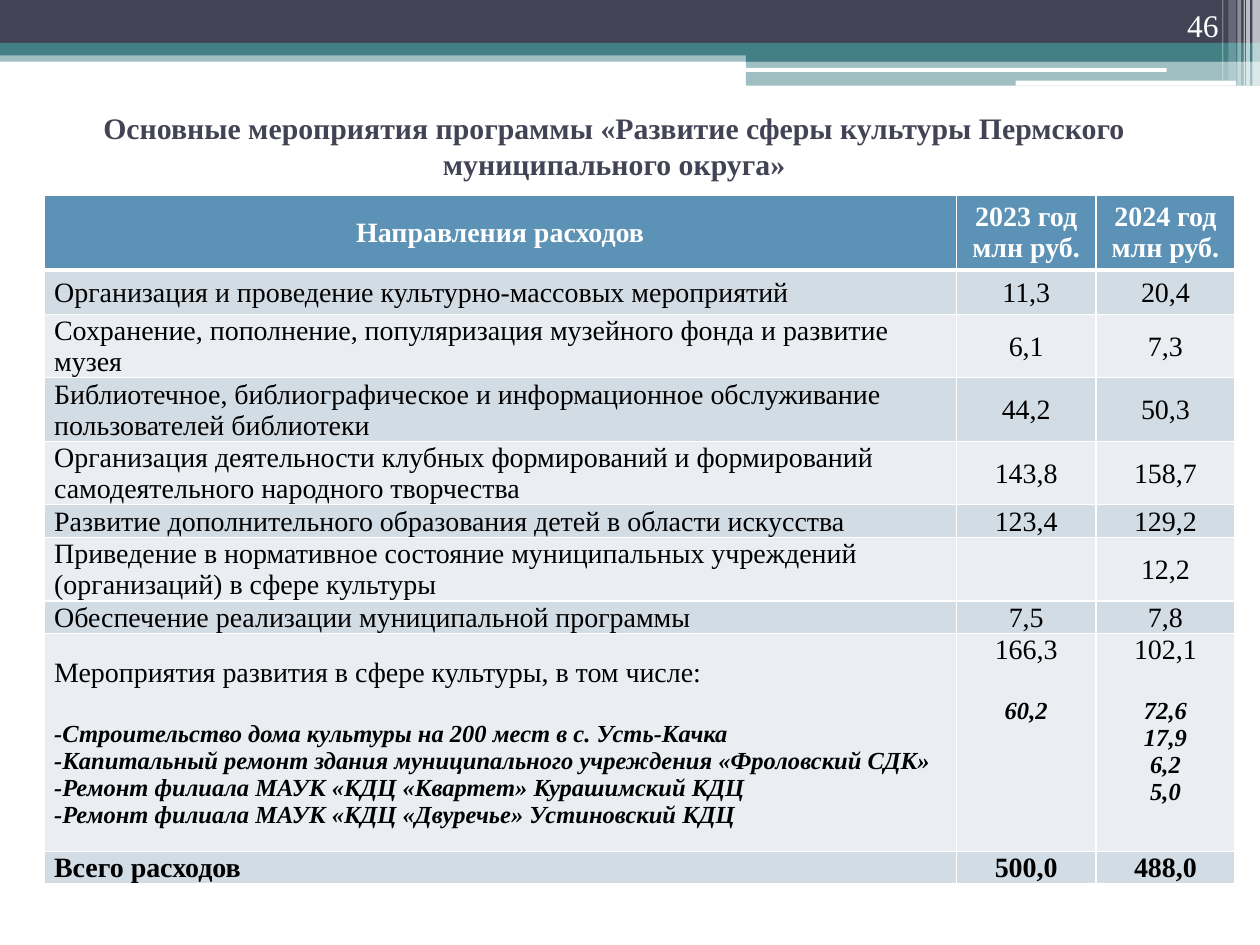
from lxml.etree import SubElement
from pptx import Presentation
from pptx.dml.color import RGBColor
from pptx.enum.shapes import MSO_SHAPE
from pptx.enum.text import MSO_ANCHOR, PP_ALIGN
from pptx.oxml.ns import qn
from pptx.util import Inches, Pt

COLORS = {
    "white": "FFFFFF", "black": "000000", "navy": "424456", "teal": "438086",
    "header": "5C92B5", "odd": "D2DCE5", "even": "EAEEF3",
}
COLS, ROWS = 100, 75  # grid cells across and down the slide

# left, top, width, height in grid cells, colour, opacity in percent
BANDS = [
    (0, 4, 100, 0.9, "teal", 50),
    (0, 0, 100, 3.4, "navy", 100),
    (0, 3.4, 100, 1, "teal", 100),
    (59.2, 3.9, 40.8, 1, "teal", 100),
    (59.2, 4.8, 40.8, 2, "teal", 50),
]
PILLS = [(59.1, 5.4, 33.5, 0.3), (80.6, 6.4, 17.5, 0.4)]
# left, width, height in grid cells, opacity in percent
STRIPES = [
    (99.4, 0.6, 6.8, 65), (98.9, 0.3, 6.8, 65), (98.7, 0.1, 6.8, 60),
    (98.2, 0.3, 6.8, 40), (97.5, 0.6, 6.4, 20), (97, 0.1, 6.4, 30),
]

COLUMN_WIDTHS = [72.4, 11.1, 11]
HEADER = ["Направления расходов", "2023 год\nмлн руб.", "2024 год\nмлн руб."]
# row height in grid cells, then the cells
EXPENSES = [
    (3.5, "Организация и проведение культурно-массовых мероприятий", "11,3", "20,4"),
    (5, "Сохранение, пополнение, популяризация музейного фонда и развитие музея",
     "6,1", "7,3"),
    (5, "Библиотечное, библиографическое и информационное обслуживание "
     "пользователей библиотеки", "44,2", "50,3"),
    (5, "Организация деятельности клубных формирований и формирований "
     "самодеятельного народного творчества", "143,8", "158,7"),
    (2.6, "Развитие дополнительного образования детей в области искусства",
     "123,4", "129,2"),
    (5, "Приведение в нормативное состояние муниципальных учреждений "
     "(организаций) в сфере культуры", "", "12,2"),
    (2.6, "Обеспечение реализации муниципальной программы", "7,5", "7,8"),
    (17.3, "Мероприятия развития в сфере культуры, в том числе:", "166,3", "102,1"),
    (2.5, "Всего расходов", "500,0", "488,0"),
]
DEVELOPMENT_ROW, TOTAL_ROW = 8, 9
DEVELOPMENT_DETAILS = [
    ["-Строительство дома культуры на 200 мест в с. Усть-Качка",
     "-Капитальный ремонт здания муниципального учреждения «Фроловский СДК»",
     "-Ремонт филиала МАУК «КДЦ «Квартет» Курашимский КДЦ",
     "-Ремонт филиала МАУК «КДЦ «Двуречье» Устиновский КДЦ"],
    ["60,2"],
    ["72,6", "17,9", "6,2", "5,0"],
]


class SlideBuilder:
    font_name = "Times New Roman"

    def __init__(self, prs):
        self.cell_width = prs.slide_width / COLS
        self.cell_height = prs.slide_height / ROWS
        self.slide = prs.slides.add_slide(prs.slide_layouts[5])

    def box(self, left, top, width, height):
        """Turn grid cells into slide lengths."""
        return (round(left * self.cell_width), round(top * self.cell_height),
                round(width * self.cell_width), round(height * self.cell_height))

    def color(self, name):
        return RGBColor.from_string(COLORS[name])

    def style(self, p, size, color, align, bold=False, italic=False):
        p.alignment = align
        p.font.name, p.font.size = self.font_name, Pt(size)
        p.font.bold, p.font.italic = bold, italic
        p.font.color.rgb = self.color(color)

    def bar(self, left, top, width, height, color, opacity=100,
            kind=MSO_SHAPE.RECTANGLE):
        sp = self.slide.shapes.add_shape(kind, *self.box(left, top, width, height))
        sp.shadow.inherit = False
        sp.line.fill.background()
        sp.fill.solid()
        sp.fill.fore_color.rgb = self.color(color)
        if opacity < 100:
            fill = sp.fill._xPr.find(qn("a:solidFill"))
            SubElement(fill[0], qn("a:alpha"), val=str(opacity * 1000))

    def title(self, text, *place):
        sp = self.slide.shapes.title
        sp.left, sp.top, sp.width, sp.height = self.box(*place)
        tf = sp.text_frame
        tf.text = text
        tf.word_wrap = True
        tf.vertical_anchor = MSO_ANCHOR.MIDDLE
        self.style(tf.paragraphs[0], 17, "navy", PP_ALIGN.CENTER, bold=True)

    def page_number(self, text, *place):
        tf = self.slide.shapes.add_textbox(*self.box(*place)).text_frame
        tf.word_wrap = True
        tf.text = text
        tf.vertical_anchor = MSO_ANCHOR.BOTTOM
        self.style(tf.paragraphs[0], 18, "white", PP_ALIGN.RIGHT)

    def borders(self, cell, bottom):
        tc_pr = cell._tc.get_or_add_tcPr()
        for side, width in (("L", 1), ("R", 1), ("T", 1), ("B", bottom)):
            ln = SubElement(tc_pr, qn(f"a:ln{side}"), w=str(Pt(width)))
            fill = SubElement(ln, qn("a:solidFill"))
            SubElement(fill, qn("a:srgbClr"), val=COLORS["white"])

    def cell(self, cell, text, row, col, details=()):
        header = row == 0
        self.borders(cell, 3 if header else 1)
        cell.fill.solid()
        fill = "header" if header else "odd" if row % 2 else "even"
        cell.fill.fore_color.rgb = self.color(fill)
        top_aligned = details and col > 0
        cell.vertical_anchor = MSO_ANCHOR.TOP if top_aligned else MSO_ANCHOR.MIDDLE
        if not header:
            cell.margin_left = Inches(0.01 if col else 0.08)
            cell.margin_right = cell.margin_top = Inches(0.01)
            cell.margin_bottom = 0
        align = PP_ALIGN.CENTER if header or col else PP_ALIGN.LEFT
        tf = cell.text_frame
        tf.text = text
        for p in tf.paragraphs:
            self.style(p, 16, "white" if header else "black", align,
                       bold=header or row == TOTAL_ROW)
        for i, detail in enumerate(details):
            p = tf.add_paragraph()
            p.text = detail
            self.style(p, 14, "black", align, bold=True, italic=True)
            if i == 0:
                p.space_before = Pt(18)

    def table(self, left, top, widths, rows):
        """Each row is its height followed by its cell texts."""
        place = self.box(left, top, sum(widths), sum(row[0] for row in rows))
        table = self.slide.shapes.add_table(len(rows), len(widths), *place).table
        for column, width in zip(table.columns, widths):
            column.width = round(width * self.cell_width)
        for r, (height, *texts) in enumerate(rows):
            table.rows[r].height = round(height * self.cell_height)
            for c, text in enumerate(texts):
                details = DEVELOPMENT_DETAILS[c] if r == DEVELOPMENT_ROW else ()
                self.cell(table.cell(r, c), text, r, c, details)


def main():
    prs = Presentation()
    prs.slide_width, prs.slide_height = Inches(10), Inches(7.5)
    s = SlideBuilder(prs)
    for band in BANDS:
        s.bar(*band)
    for pill in PILLS:
        s.bar(*pill, "white", kind=MSO_SHAPE.ROUNDED_RECTANGLE)
    for left, width, height, opacity in STRIPES:
        s.bar(left, 0, width, height, "white", opacity)
    s.table(3.5, 15.5, COLUMN_WIDTHS, [(5.9, *HEADER), *EXPENSES])
    s.page_number("46", 89.4, 0, 8.3, 4)
    s.title("Основные мероприятия программы «Развитие сферы культуры Пермского "
            "муниципального округа»", 6.7, 9.2, 84.1, 4.7)
    prs.save("out.pptx")


if __name__ == "__main__":
    main()
